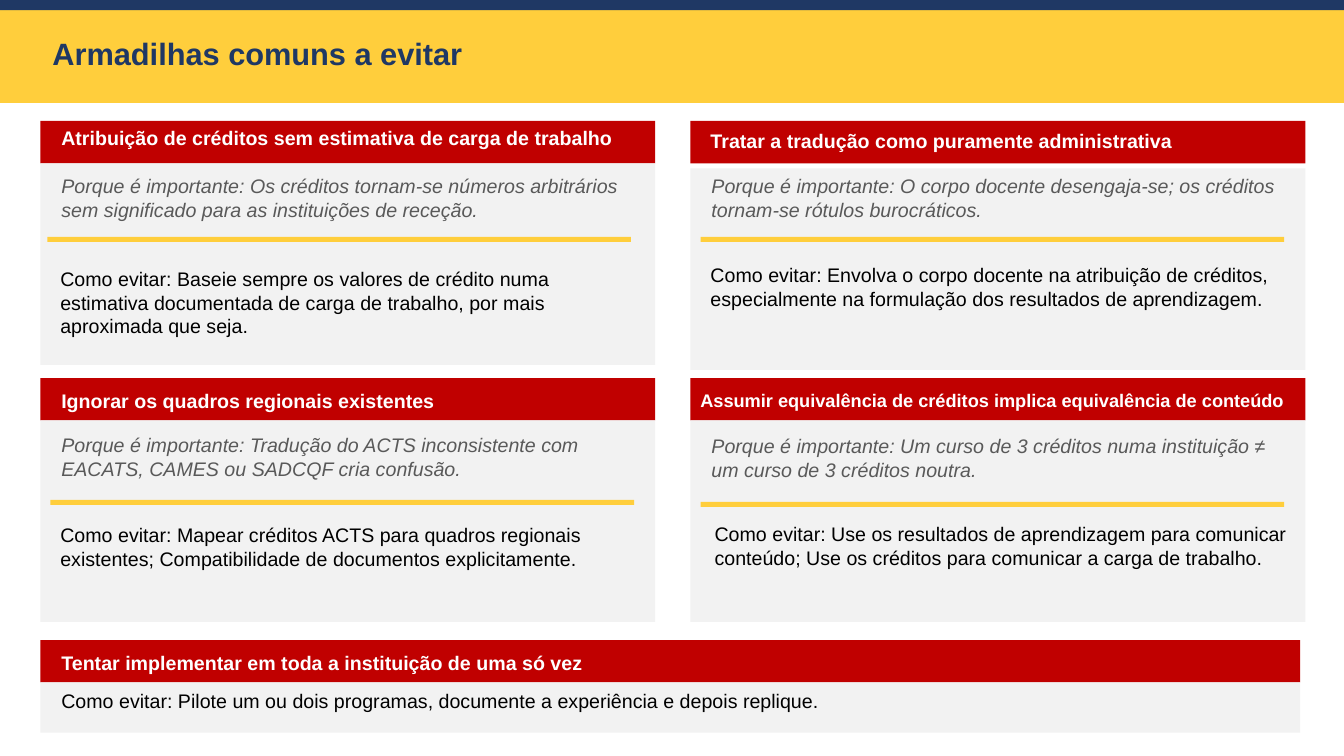
from pptx import Presentation
from pptx.dml.color import RGBColor
from pptx.enum.shapes import MSO_SHAPE as Shape
from pptx.enum.text import MSO_ANCHOR as Anchor, PP_ALIGN as Align
from pptx.util import Pt

NAVY, YELLOW, RED = "1F3864", "FFCE3C", "C00000"
PANEL_GREY, TEXT_GREY, WHITE, BLACK = "F2F2F2", "595959", "FFFFFF", "000000"
SLIDE_WIDTH, SLIDE_HEIGHT = 960, 540
HEADER_HEIGHT = 30.24
RULE_WIDTH, RULE_HEIGHT = 416.88, 3.6
TEXT_MARGIN = 13.68

# Offsets are (x, y) from the top left corner of each card
CARDS = [
    dict(title="Atribuição de créditos sem estimativa de carga de trabalho",
         why="Porque é importante: Os créditos tornam-se números arbitrários "
             "sem significado para as instituições de receção.",
         how="Como evitar: Baseie sempre os valores de crédito numa estimativa "
             "documentada de carga de trabalho, por mais aproximada que seja.",
         title_at=(7.92, 0), why_at=(7.92, 34.56), rule_at=(5.04, 82.8), how_at=(7.2, 100.8)),
    dict(title="Tratar a tradução como puramente administrativa",
         why="Porque é importante: O corpo docente desengaja-se; os créditos "
             "tornam-se rótulos burocráticos.",
         how="Como evitar: Envolva o corpo docente na atribuição de créditos, "
             "especialmente na formulação dos resultados de aprendizagem.",
         title_at=(7.2, 2.16), why_at=(7.92, 34.56), rule_at=(7.2, 82.8), how_at=(7.2, 97.92),
         panel_gap=3.6),
    dict(title="Ignorar os quadros regionais existentes",
         why="Porque é importante: Tradução do ACTS inconsistente com EACATS, "
             "CAMES ou SADCQF cria confusão.",
         how="Como evitar: Mapear créditos ACTS para quadros regionais "
             "existentes; Compatibilidade de documentos explicitamente.",
         title_at=(7.92, 4.32), why_at=(7.92, 36), rule_at=(7.2, 87.12), how_at=(7.2, 100.08)),
    dict(title="Assumir equivalência de créditos implica equivalência de conteúdo",
         why="Porque é importante: Um curso de 3 créditos numa instituição ≠ "
             "um curso de 3 créditos noutra.",
         how="Como evitar: Use os resultados de aprendizagem para comunicar "
             "conteúdo; Use os créditos para comunicar a carga de trabalho.",
         title_at=(0, 4.32), why_at=(7.92, 36.72), rule_at=(7.2, 88.56), how_at=(10.08, 99.36),
         title_size=13, title_width=453.6),
]
BOTTOM_CARD = dict(
    title="Tentar implementar em toda a instituição de uma só vez",
    how="Como evitar: Pilote um ou dois programas, documente a experiência e depois replique.",
    title_at=(7.92, 4.32), how_at=(7.92, 31.68))


def rgb(hex_color):
    return RGBColor.from_string(hex_color)


def add_bar(slide, left, top, width, height, color):
    bar = slide.shapes.add_shape(Shape.RECTANGLE, Pt(left), Pt(top), Pt(width), Pt(height))
    bar.shadow.inherit = False
    bar.fill.solid()
    bar.fill.fore_color.rgb = rgb(color)
    bar.line.fill.background()


def write(shape, text, size, color, bold=False, italic=False):
    frame = shape.text_frame
    frame.word_wrap = True
    frame.vertical_anchor = Anchor.TOP
    frame.text = text
    paragraph = frame.paragraphs[0]
    paragraph.alignment = Align.LEFT
    font = paragraph.runs[0].font
    font.name, font.size, font.bold, font.italic = "Arial", Pt(size), bold, italic
    font.color.rgb = rgb(color)


def add_text(slide, left, top, width, height, text, size, color, **style):
    box = slide.shapes.add_textbox(Pt(left), Pt(top), Pt(width), Pt(height))
    write(box, text, size, color, **style)


def add_title_band(slide, left, top, width, height, text):
    add_bar(slide, left, top, width, height, YELLOW)
    add_bar(slide, left, top, width, 7.2, NAVY)
    title = slide.shapes.title
    title.left, title.top = Pt(left + 30.24), Pt(top + 20.88)
    title.width, title.height = Pt(864), Pt(33.84)
    write(title, text, 22, NAVY, bold=True)
    # Bring the title in front of the band
    slide.shapes._spTree.append(title._element)


def add_card(slide, left, top, width, height, card):
    text_width = width - TEXT_MARGIN

    # Red header
    add_bar(slide, left, top, width, HEADER_HEIGHT, RED)
    x, y = card["title_at"]
    add_text(slide, left + x, top + y, card.get("title_width", text_width), 24.48,
             card["title"], card.get("title_size", 14), WHITE, bold=True)

    # Grey panel
    panel_top = top + HEADER_HEIGHT + card.get("panel_gap", 0)
    add_bar(slide, left, panel_top, width, height - HEADER_HEIGHT, PANEL_GREY)

    # Reason and yellow rule
    if "why" in card:
        x, y = card["why_at"]
        add_text(slide, left + x, top + y, text_width, 41.04,
                 card["why"], 14, TEXT_GREY, italic=True)
        x, y = card["rule_at"]
        add_bar(slide, left + x, top + y, RULE_WIDTH, RULE_HEIGHT, YELLOW)

    # Advice
    x, y = card["how_at"]
    text_height = 41.04 if "why" in card else 24.48
    add_text(slide, left + x, top + y, text_width, text_height, card["how"], 14, BLACK)


def main():
    presentation = Presentation()
    presentation.slide_width, presentation.slide_height = Pt(SLIDE_WIDTH), Pt(SLIDE_HEIGHT)
    slide = presentation.slides.add_slide(presentation.slide_layouts[5])

    add_title_band(slide, 0, 0, SLIDE_WIDTH, 73.44, "Armadilhas comuns a evitar")
    # Two by two grid of cards
    for index, card in enumerate(CARDS):
        row, column = divmod(index, 2)
        add_card(slide, 28.8 + column * 464.4, 86.4 + row * 183.6,
                 439.2, HEADER_HEIGHT + 144, card)
    add_card(slide, 28.8, 457.2, 900, HEADER_HEIGHT + 36, BOTTOM_CARD)

    presentation.save("out.pptx")


if __name__ == "__main__":
    main()
